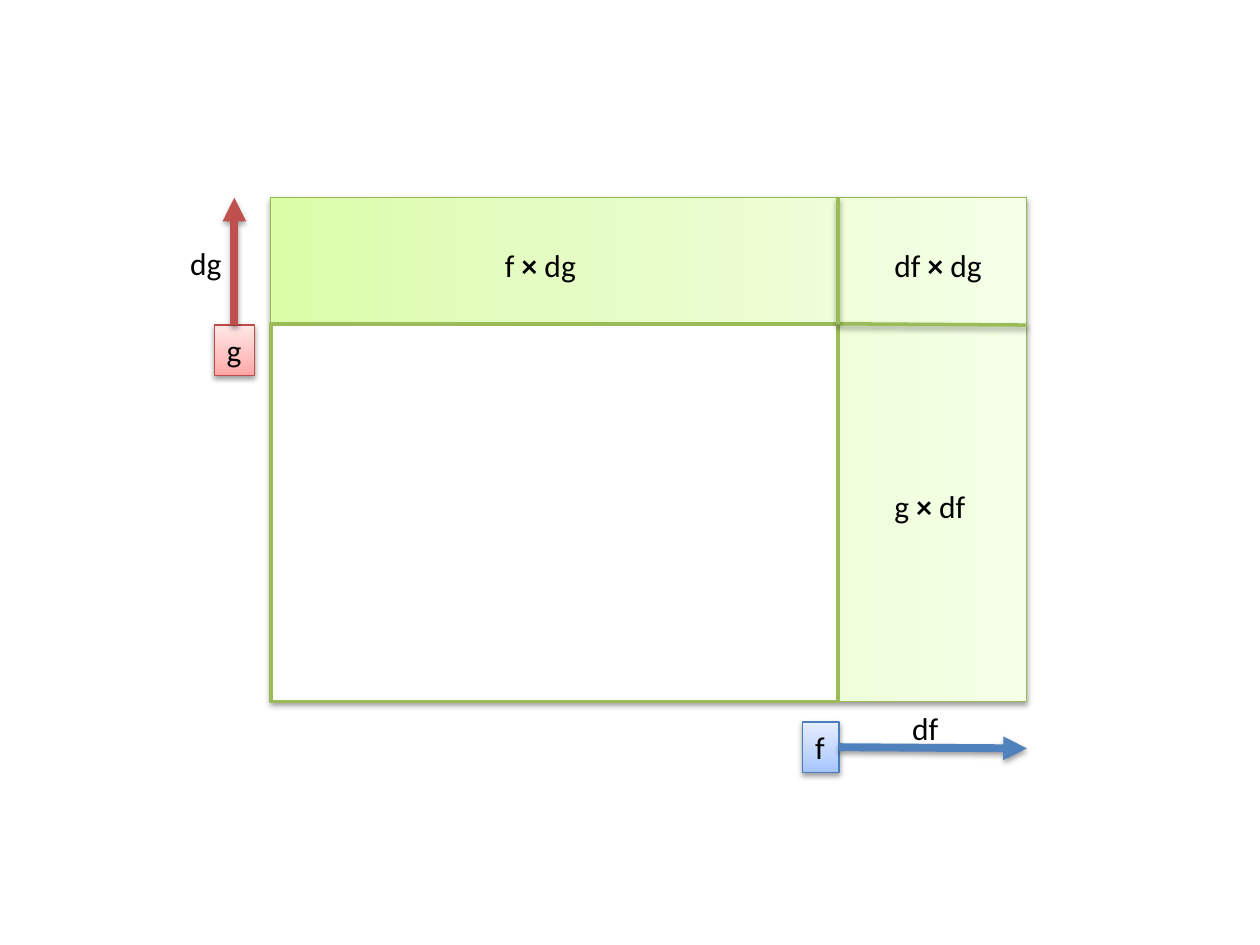
from dataclasses import dataclass

from lxml.etree import SubElement
from pptx import Presentation
from pptx.dml.color import RGBColor
from pptx.enum.shapes import MSO_CONNECTOR as Connector, MSO_SHAPE as Shape
from pptx.enum.text import MSO_AUTO_SIZE as AutoSize
from pptx.oxml.ns import qn
from pptx.util import Emu, Pt

EMU_PER_PX = 9144


def px(length):
    return Emu(length * EMU_PER_PX)


@dataclass(frozen=True)
class Theme:
    font: str = "Calibri"
    text_size: int = 18
    text: str = "000000"
    white: str = "FFFFFF"
    green: str = "9BBB59"
    green_edge: str = "98B955"
    green_fade: tuple = ("DAFDA7", "E4FCC2", "F5FFE7")
    red: str = "C0504D"
    red_edge: str = "BF4C48"
    red_fade: tuple = ("FFA6A5", "FFC0BF", "FFE7E7")
    blue: str = "4F81BD"
    blue_edge: str = "4B7EBC"
    blue_fade: tuple = ("A4C4FF", "BFD4FF", "E6EEFF")
    fade_stops: tuple = (0, 35, 100)
    thin: float = 0.75
    medium: float = 2
    thick: float = 4.5


class Diagram:
    def __init__(self, slide, theme):
        self.slide = slide
        self.theme = theme

    def outline(self, item, color, width):
        item.line.color.rgb = RGBColor.from_string(color)
        item.line.width = Pt(width)

    def fade(self, shape, colors, angle):
        shape.fill.gradient()
        shape.fill.gradient_angle = angle
        stops = shape.element.spPr.find(qn("a:gradFill")).find(qn("a:gsLst"))
        for stop in list(stops):
            stops.remove(stop)
        for position, color in zip(self.theme.fade_stops, colors):
            stop = SubElement(stops, qn("a:gs"), pos=str(position * 1000))
            SubElement(stop, qn("a:srgbClr"), val=color)

    def shadow(self, item):
        effects = SubElement(item.element.spPr, qn("a:effectLst"))
        outer = SubElement(effects, qn("a:outerShdw"), blurRad="40000",
                           dist="20000", dir="5400000", rotWithShape="0")
        color = SubElement(outer, qn("a:srgbClr"), val="000000")
        SubElement(color, qn("a:alpha"), val="38000")

    def rectangle(self, left, top, width, height):
        return self.slide.shapes.add_shape(
            Shape.RECTANGLE, px(left), px(top), px(width), px(height))

    def faded_area(self, left, top, width, height):
        area = self.rectangle(left, top, width, height)
        self.fade(area, self.theme.green_fade, 0)
        self.outline(area, self.theme.green_edge, self.theme.thin)
        self.shadow(area)

    def plain_area(self, left, top, width, height):
        area = self.rectangle(left, top, width, height)
        area.shadow.inherit = False
        area.fill.solid()
        area.fill.fore_color.rgb = RGBColor.from_string(self.theme.white)
        self.outline(area, self.theme.green, self.theme.medium)

    def label(self, left, top, width, *words):
        box = self.slide.shapes.add_textbox(px(left), px(top), px(width), px(40))
        frame = box.text_frame
        frame.word_wrap = False
        frame.auto_size = AutoSize.SHAPE_TO_FIT_TEXT
        para = frame.paragraphs[0]
        for word in words:
            span = para.add_run()
            span.text = word
            span.font.name = self.theme.font
            span.font.size = Pt(self.theme.text_size)
            span.font.bold = word == "×"
            span.font.color.rgb = RGBColor.from_string(self.theme.text)
        return box

    def tag(self, left, top, width, word, colors, edge):
        box = self.label(left, top, width, word)
        self.fade(box, colors, 90)
        self.outline(box, edge, self.theme.thin)
        self.shadow(box)
        return box

    def line(self, start, end, color, width):
        line = self.slide.shapes.add_connector(
            Connector.STRAIGHT, *map(px, start + end))
        self.outline(line, color, width)
        self.shadow(line)
        return line

    def arrow(self, box, side, start, end, color):
        arrow = self.line(start, end, color, self.theme.thick)
        SubElement(arrow.line._get_or_add_ln(), qn("a:tailEnd"), type="triangle")
        arrow.begin_connect(box, side)


def main():
    deck = Presentation()
    deck.slide_width, deck.slide_height = px(1000), px(750)
    theme = Theme()
    page = Diagram(deck.slides.add_slide(deck.slide_layouts[6]), theme)

    left, top, right, bottom = 215, 157, 815, 557
    f_edge, g_edge = 665, 257

    g_box = page.tag(170, 258, 32, "g", theme.red_fade, theme.red_edge)
    f_box = page.tag(637, 573, 29, "f", theme.blue_fade, theme.blue_edge)
    page.arrow(f_box, 3, (f_edge, 593), (right, 594), theme.blue)
    page.arrow(g_box, 0, (186, 258), (186, top), theme.red)

    page.faded_area(left, top, right - left, bottom - top)
    page.plain_area(left, g_edge, f_edge - left, bottom - g_edge)
    for end in ((right, g_edge + 1), (f_edge, top)):
        page.line((f_edge, g_edge), end, theme.green, theme.medium)

    page.label(391, 190, 77, "f ", "×", " dg")
    page.label(700, 382, 78, "g ", "×", " df")
    page.label(700, 190, 90, "df ", "×", " dg")
    page.label(141, 189, 45, "dg")
    page.label(714, 558, 41, "df")

    deck.save("out.pptx")


if __name__ == "__main__":
    main()
